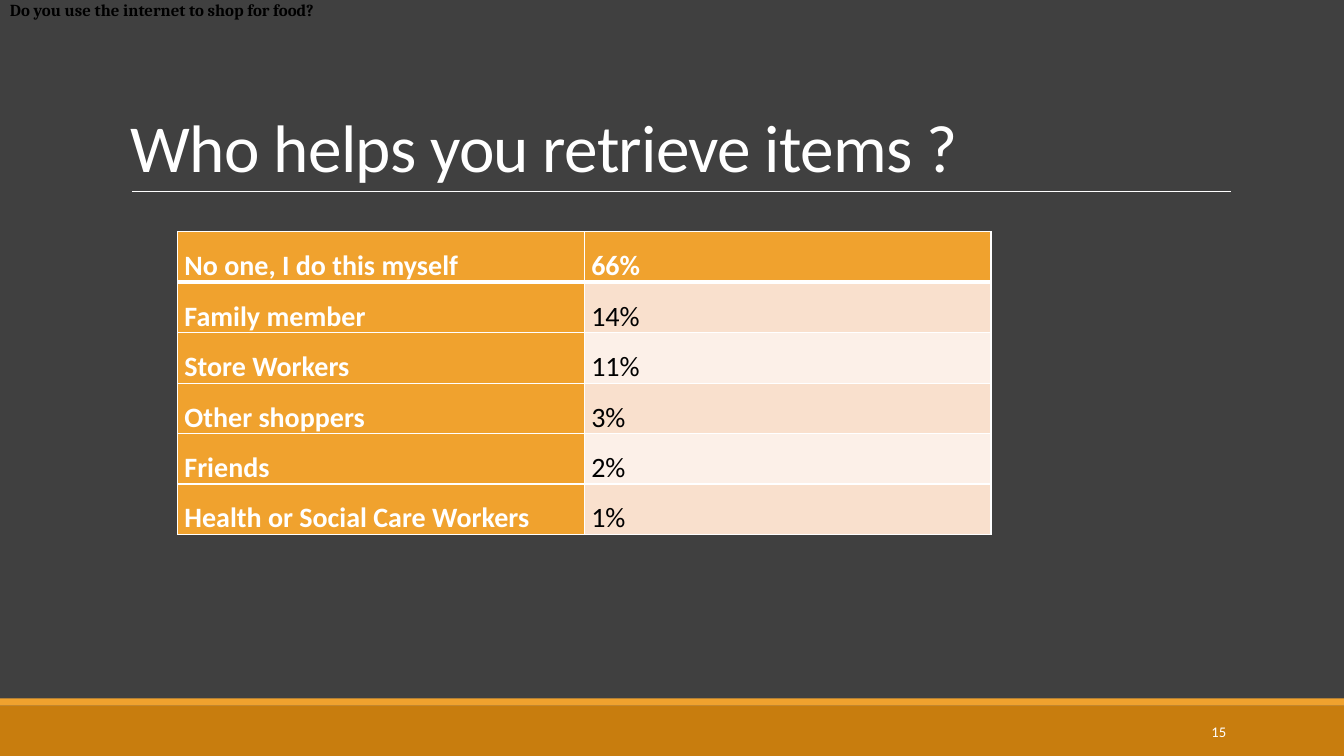
from lxml.etree import SubElement
from pptx import Presentation
from pptx.dml.color import RGBColor
from pptx.enum.shapes import MSO_CONNECTOR, MSO_SHAPE
from pptx.enum.text import MSO_ANCHOR, PP_ALIGN
from pptx.oxml.ns import qn
from pptx.util import Inches, Pt

COLORS = {
    "background": "404040",
    "footer": "C87D0E",
    "accent": "F0A22E",
    "band_dark": "F9E0CD",
    "band_light": "FCF0E8",
    "white": "FFFFFF",
    "black": "000000",
}
HELPERS = [
    ("No one, I do this myself", "66%"),
    ("Family member", "14%"),
    ("Store Workers", "11%"),
    ("Other shoppers", "3%"),
    ("Friends", "2%"),
    ("Health or Social Care Workers", "1%"),
]


def color(name):
    return RGBColor.from_string(COLORS[name])


def add_run(paragraph, text, size, color_name, bold=False, font="Calibri"):
    run = paragraph.add_run()
    run.text = text
    run.font.name = font
    run.font.size = Pt(size)
    run.font.bold = bold
    run.font.color.rgb = color(color_name)
    return run


def add_text_box(slide, left, top, width, height, anchor):
    shape = slide.shapes.add_textbox(Inches(left), Inches(top), Inches(width), Inches(height))
    frame = shape.text_frame
    frame.word_wrap = True
    frame.vertical_anchor = anchor
    return frame


def add_bar(slide, left, top, width, height, color_name):
    bar = slide.shapes.add_shape(
        MSO_SHAPE.RECTANGLE, Inches(left), Inches(top), Inches(width), Inches(height))
    bar.shadow.inherit = False
    bar.fill.solid()
    bar.fill.fore_color.rgb = color(color_name)
    bar.line.fill.background()


def add_footer(slide, left, top, width, height, number):
    stripe = 0.07
    add_bar(slide, left, top + stripe, width, height - stripe, "footer")
    add_bar(slide, left, top, width, stripe, "accent")
    frame = add_text_box(slide, left + width - 2.5, top + 0.13, 1.43, 0.4, MSO_ANCHOR.MIDDLE)
    paragraph = frame.paragraphs[0]
    paragraph.alignment = PP_ALIGN.RIGHT
    add_run(paragraph, number, 10.5, "white")


def add_title(slide, left, top, width, height, text):
    bottom = Inches(top + height)
    rule = slide.shapes.add_connector(
        MSO_CONNECTOR.STRAIGHT, Inches(left + 0.11), bottom, Inches(left + width + 0.01), bottom)
    rule.line.color.rgb = color("white")
    rule.line.width = Pt(0.5)
    SubElement(rule._element.spPr, qn("a:effectLst"))
    frame = add_text_box(slide, left, top, width, height, MSO_ANCHOR.BOTTOM)
    paragraph = frame.paragraphs[0]
    paragraph.line_spacing = 0.85
    run = add_run(paragraph, text, 48, "white")
    run.font._element.set("spc", "-50")


def add_borders(cell, widths):
    properties = cell._tc.get_or_add_tcPr()
    for side, width in widths.items():
        line = SubElement(properties, qn(f"a:ln{side}"), w=str(Pt(width)))
        fill = SubElement(line, qn("a:solidFill"))
        SubElement(fill, qn("a:srgbClr"), val=COLORS["white"])


def add_helper_table(slide, left, top, width, row_height, rows):
    frame = slide.shapes.add_table(
        len(rows), 2, Inches(left), Inches(top), Inches(width), Inches(row_height * len(rows)))
    table = frame.table
    for row_index, row in enumerate(rows):
        table.rows[row_index].height = Inches(row_height)
        band = "band_dark" if row_index % 2 else "band_light"
        for column_index, text in enumerate(row):
            heading = row_index == 0 or column_index == 0
            cell = table.cell(row_index, column_index)
            add_borders(cell, {
                "L": 1,
                "R": 1,
                "T": 3 if row_index == 1 else 1,
                "B": 3 if row_index == 0 else 1,
            })
            cell.fill.solid()
            cell.fill.fore_color.rgb = color("accent" if heading else band)
            cell.margin_left = cell.margin_right = Inches(0.07)
            cell.margin_top = cell.margin_bottom = 0
            paragraph = cell.text_frame.paragraphs[0]
            paragraph.line_spacing = 1.5
            add_run(paragraph, text, 20, "white" if heading else "black", heading)


def add_question(slide, left, top, width, height, text):
    frame = add_text_box(slide, left, top, width, height, MSO_ANCHOR.TOP)
    frame.margin_top = frame.margin_bottom = 0
    add_run(frame.paragraphs[0], text, 12, "black", True, "Cambria")


def main():
    presentation = Presentation()
    presentation.slide_width = Inches(13.33)
    presentation.slide_height = Inches(7.5)
    slide = presentation.slides.add_slide(presentation.slide_layouts[6])
    slide.background.fill.solid()
    slide.background.fill.fore_color.rgb = color("background")
    add_footer(slide, 0, 6.93, 13.33, 0.57, "15")
    add_title(slide, 1.2, 0.31, 11, 1.59, "Who helps you retrieve items ?")
    add_helper_table(slide, 1.76, 2.3, 8.07, 0.47, HELPERS)
    add_question(slide, 0, 0, 13.33, 0.5, "Do you use the internet to shop for food?")
    presentation.save("out.pptx")


if __name__ == "__main__":
    main()
